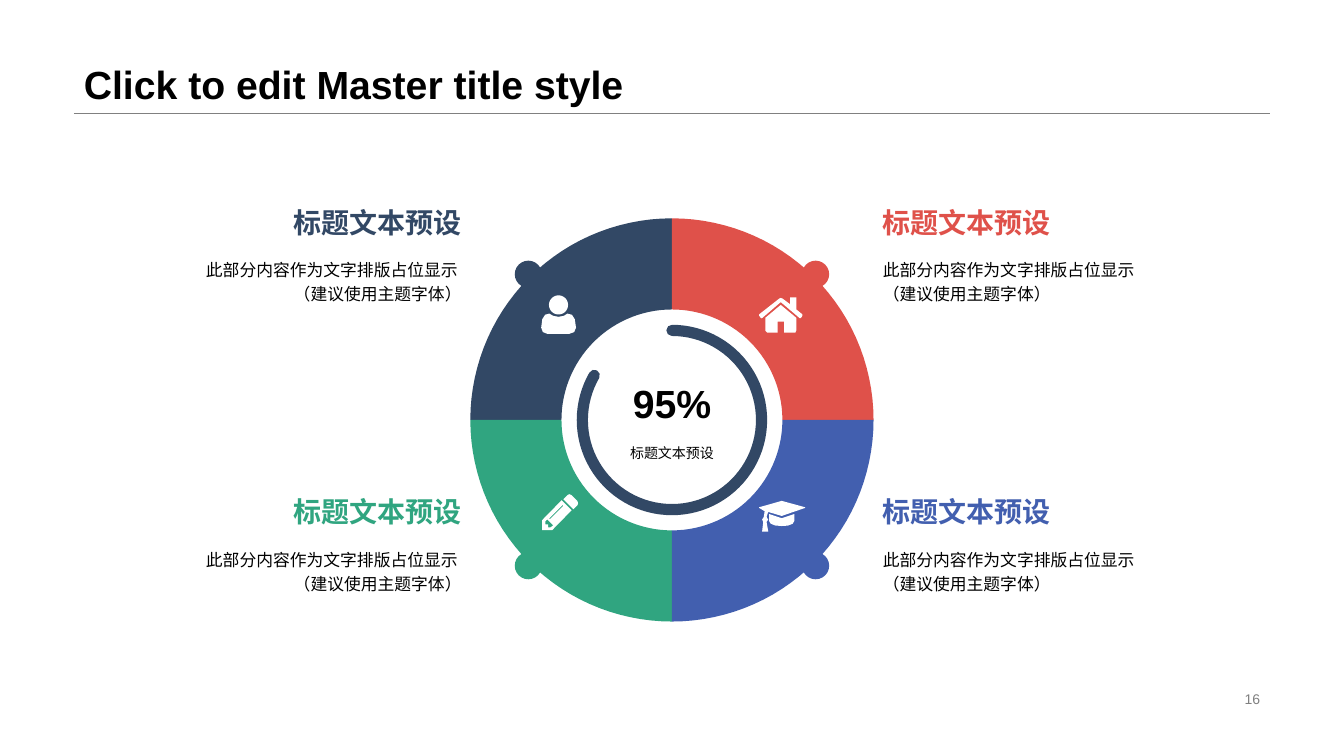
import math

import pptx
import pptx.dml.color
import pptx.enum.shapes
import pptx.enum.text
import pptx.oxml.ns
import pptx.oxml.xmlchemy
import pptx.util
from lxml import etree

Pt = pptx.util.Pt
RGBColor = pptx.dml.color.RGBColor
Align = pptx.enum.text.PP_ALIGN
Anchor = pptx.enum.text.MSO_ANCHOR
Preset = pptx.enum.shapes.MSO_SHAPE

NAVY = RGBColor(0x32, 0x48, 0x65)
RED = RGBColor(0xDF, 0x51, 0x4A)
GREEN = RGBColor(0x30, 0xA5, 0x80)
BLUE = RGBColor(0x42, 0x5F, 0xAF)
WHITE = RGBColor(0xFF, 0xFF, 0xFF)
BLACK = RGBColor(0, 0, 0)
GRAY = RGBColor(0x80, 0x80, 0x80)

CENTER_X, CENTER_Y = 480, 300
OUTER_RADIUS, INNER_RADIUS, GAUGE_RADIUS = 144, 78.9, 64
DOT_SIZE, DOT_OFFSET_X, DOT_OFFSET_Y = 19.4, 102.6, 104.1
HEADING = "标题文本预设"
BODY = "此部分内容作为文字排版占位显示 \n（建议使用主题字体）"


def arc_points(center_x, center_y, radius, start, end):
    """Return points along a circle between two angles in degrees."""
    steps = abs(end - start) // 3
    angles = [math.radians(start + (end - start) * i / steps) for i in range(steps + 1)]
    return [(center_x + radius * math.cos(a), center_y + radius * math.sin(a)) for a in angles]


PERSON = [
    [(20.2, 27.4), (4.3, 27.4), (1.2, 26.2), (0, 23), (0.8, 17), (2.8, 13.8), (5.8, 13),
     (8.6, 14.6), (12.4, 15.3), (16.2, 14.6), (18.7, 13), (22, 13.8), (24, 17), (24.9, 23),
     (23.6, 26.2)],
    arc_points(12.4, 6.8, 6.8, 0, 360),
]
HOUSE = [
    [(30.2, 14.4), (29.2, 15), (15.5, 3.4), (2, 15), (1.2, 14.6), (0, 13), (0, 12.2),
     (14.4, 0.9), (15.5, 0.4), (16.8, 0.9), (22.3, 5), (22.3, 0), (26.6, 0), (26.6, 8.6),
     (31, 12.2), (31, 13)],
    [(26.6, 23.8), (25.9, 25.2), (18, 25.2), (18, 17.3), (13.2, 17.3), (13.2, 25.2),
     (5.8, 25.2), (4.5, 23.8), (4.5, 14.6), (15.5, 5.4), (26.6, 14.6)],
]
PENCIL = [
    [(21, 11.5), (7.2, 25.6), (0, 25.6), (0, 18.5), (13.9, 4.3)],
    [(7.9, 22.3), (3.6, 18), (2.2, 19.4), (2.2, 21.6), (4.3, 21.6), (4.3, 23.8), (5.8, 23.8)],
    [(14.6, 7.8), (5, 17.4), (5.5, 17.9), (15.1, 8.3)],
    [(25.2, 7.9), (22.3, 10.8), (15.1, 3.6), (18, 0.7), (19.4, 0), (20.9, 0.7), (25.2, 5),
     (25.6, 6.5)],
]
CAP = [
    [(33, 5), (16.2, 10.8), (6.5, 7.9), (5.4, 11.5), (6.5, 13.4), (5.4, 15.1), (6.6, 22),
     (2.2, 22), (3, 15.1), (2.2, 13.4), (3.4, 11.5), (4, 7.4), (0, 5), (0, 4.6), (16.2, 0),
     (33, 4.6)],
    [(25.2, 14.4), (24, 16.4), (20.5, 17.7), (16.2, 18), (11.5, 17.6), (8.3, 16.3),
     (7.2, 14.4), (7.2, 9.4), (16.2, 12.4), (25.2, 9.4)],
]

QUADRANTS = [
    (-1, -1, 180, NAVY, PERSON, (386.6, 211)),
    (1, -1, 270, RED, HOUSE, (542.2, 212.4)),
    (-1, 1, 90, GREEN, PENCIL, (387.3, 353)),
    (1, 1, 0, BLUE, CAP, (542.2, 357.8)),
]


def fill_plain(shape, color):
    """Give a shape a solid fill without line or shadow."""
    shape.shadow.inherit = False
    shape.fill.solid()
    shape.fill.fore_color.rgb = color
    shape.line.fill.background()


def add_outline(slide, contours, color, left=0, top=0):
    """Draw closed contours as one filled freeform."""
    placed = [[(Pt(left + x), Pt(top + y)) for x, y in contour] for contour in contours]
    builder = slide.shapes.build_freeform(*placed[0][0])
    for index, contour in enumerate(placed):
        if index:
            builder.move_to(*contour[0])
        builder.add_line_segments(contour[1:], close=True)
    fill_plain(builder.convert_to_shape(), color)


def add_segment(slide, start, color):
    """Draw one quarter of the ring, clockwise from the start angle."""
    outer = arc_points(CENTER_X, CENTER_Y, OUTER_RADIUS, start, start + 90)
    inner = arc_points(CENTER_X, CENTER_Y, INNER_RADIUS, start + 90, start)
    add_outline(slide, [outer + inner], color)


def add_dot(slide, side, level, color):
    """Draw the round knob on the outer edge of a segment."""
    left = CENTER_X + side * DOT_OFFSET_X - DOT_SIZE / 2
    top = CENTER_Y + level * DOT_OFFSET_Y - DOT_SIZE / 2
    dot = slide.shapes.add_shape(Preset.OVAL, Pt(left), Pt(top), Pt(DOT_SIZE), Pt(DOT_SIZE))
    fill_plain(dot, color)


def add_gauge(slide):
    """Draw the round-capped progress arc in the middle."""
    gauge = slide.shapes.add_shape(
        Preset.ARC, Pt(CENTER_X - GAUGE_RADIUS), Pt(CENTER_Y - GAUGE_RADIUS),
        Pt(2 * GAUGE_RADIUS), Pt(2 * GAUGE_RADIUS))
    gauge.adjustments[0] = 162
    gauge.adjustments[1] = 125.94
    gauge.shadow.inherit = False
    gauge.fill.background()
    gauge.line.color.rgb = NAVY
    gauge.line.width = Pt(8)
    gauge._element.spPr.find(pptx.oxml.ns.qn("a:ln")).set("cap", "rnd")


def add_text(slide, text, box, size, color=BLACK, bold=False, align=Align.LEFT,
             anchor=Anchor.TOP, wrap=True, spacing=None):
    """Add a text box holding one formatted paragraph."""
    text_frame = slide.shapes.add_textbox(*[Pt(length) for length in box]).text_frame
    text_frame.word_wrap = wrap
    text_frame.vertical_anchor = anchor
    paragraph = text_frame.paragraphs[0]
    paragraph.text = text
    paragraph.alignment = align
    paragraph.line_spacing = spacing
    for run in paragraph.runs:
        run.font.name = "Arial"
        run.font.size = Pt(size)
        run.font.bold = bold
        run.font.color.rgb = color


def add_caption(slide, side, level, color):
    """Add the heading and body text beside a segment."""
    left = 56.9 if side < 0 else 623.5
    top = 143.3 if level < 0 else 349.9
    align = Align.RIGHT if side < 0 else Align.LEFT
    add_text(slide, BODY, (left, top + 36, 280, 51), 12, align=align, spacing=1.2)
    add_text(slide, HEADING, (left, top, 280, 44), 20, color, True, align, wrap=False)


def add_rule(slide):
    """Draw the thin line under the title."""
    rule = slide.shapes.add_connector(
        pptx.enum.shapes.MSO_CONNECTOR.STRAIGHT, Pt(52.8), Pt(80.9), Pt(907.2), Pt(80.9))
    rule.line.color.rgb = GRAY
    rule.line.width = Pt(0.25)
    etree.SubElement(rule._element.spPr, pptx.oxml.ns.qn("a:effectLst"))


def main():
    """Build the slide and save it."""
    presentation = pptx.Presentation()
    presentation.slide_width, presentation.slide_height = Pt(960), Pt(540)
    slide = presentation.slides.add_slide(presentation.slide_layouts[6])
    add_rule(slide)
    add_text(slide, "Click to edit Master title style", (52.8, 0, 854.4, 80.9), 28, bold=True,
             anchor=Anchor.BOTTOM, spacing=0.9)
    add_text(slide, "16", (678, 491, 229.2, 16.6), 10, GRAY, align=Align.RIGHT,
             anchor=Anchor.MIDDLE)
    for side, level, start, color, icon, corner in QUADRANTS:
        add_segment(slide, start, color)
        add_dot(slide, side, level, color)
        add_outline(slide, icon, WHITE, *corner)
        add_caption(slide, side, level, color)
    add_gauge(slide)
    add_text(slide, HEADING, (442.5, 311, 75, 25), 10, align=Align.CENTER,
             anchor=Anchor.MIDDLE, wrap=False)
    add_text(slide, "95%", (444.4, 258.5, 71.2, 58.3), 28, bold=True, align=Align.CENTER,
             anchor=Anchor.MIDDLE, wrap=False)
    presentation.save("out.pptx")


if __name__ == "__main__":
    main()
